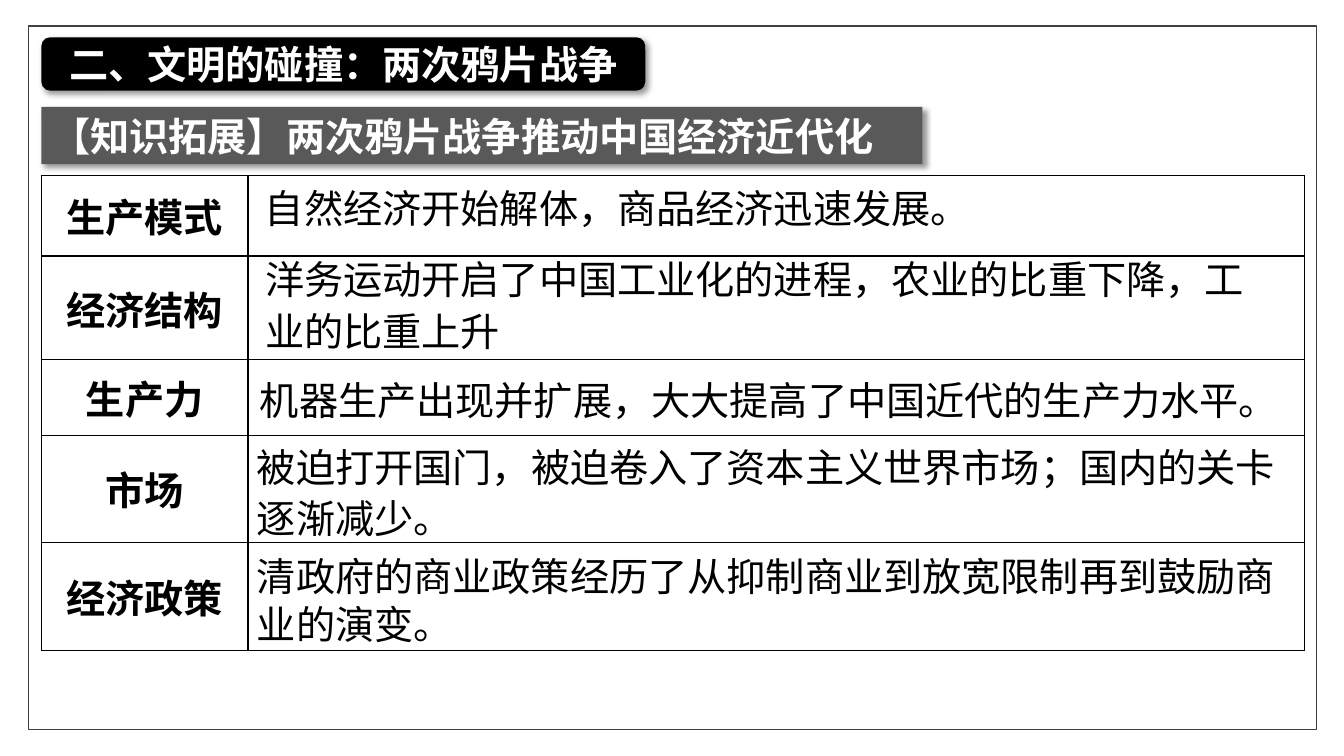
from lxml import etree
from pptx import Presentation
from pptx.dml.color import RGBColor
from pptx.enum.shapes import MSO_SHAPE
from pptx.enum.text import MSO_ANCHOR, PP_ALIGN
from pptx.oxml.ns import qn
from pptx.util import Pt

RECT = MSO_SHAPE.RECTANGLE
ROUNDED = MSO_SHAPE.ROUNDED_RECTANGLE
MIDDLE = MSO_ANCHOR.MIDDLE
LEFT = PP_ALIGN.LEFT
CENTER = PP_ALIGN.CENTER

SCALE = 9144
FONT = "Noto Sans CJK SC"
COLORS = {
    "black": "000000",
    "white": "FFFFFF",
    "frame": "404040",
    "banner": "595959",
}
LABELS = ["生产模式", "经济结构", "生产力", "市场", "经济政策"]
ROW_HEIGHTS = [80, 103, 75, 106, 107]
COLUMN_WIDTHS = [205, 1048]
DETAILS = [
    ("自然经济开始解体，商品经济迅速发展。",
     (253, 164, 1080, 71), 1.3),
    ("洋务运动开启了中国工业化的进程，农业的比重下降，工业的比重上升",
     (253, 243, 1029, 114), Pt(37)),
    ("机器生产出现并扩展，大大提高了中国近代的生产力水平。",
     (248, 368, 1067, 57), 1.0),
    ("被迫打开国门，被迫卷入了资本主义世界市场；国内的关卡逐渐减少。",
     (245, 429, 1061, 114), Pt(37)),
    ("清政府的商业政策经历了从抑制商业到放宽限制再到鼓励商业的演变。",
     (245, 543, 1067, 104), Pt(34)),
]


def px(n):
    return n * SCALE


def rgb(name):
    return RGBColor.from_string(COLORS[name])


def write(tf, text, color="black", bold=False, align=LEFT, spacing=1.0):
    p = tf.paragraphs[0]
    p.alignment = align
    p.line_spacing = spacing
    r = p.add_run()
    r.text = text
    r.font.size = Pt(28)
    r.font.bold = bold
    r.font.name = FONT
    r.font.color.rgb = rgb(color)
    etree.SubElement(r.font._element, qn("a:ea"), typeface=FONT)


def add_box(s, kind, box, fill=None, line=None):
    sp = s.shapes.add_shape(kind, *map(px, box))
    sp.shadow.inherit = False
    if fill:
        sp.fill.solid()
        sp.fill.fore_color.rgb = rgb(fill)
    else:
        sp.fill.background()
    if line:
        sp.line.color.rgb = rgb(line)
        sp.line.width = Pt(1)
    else:
        sp.line.fill.background()
    return sp


def add_shadow(sp):
    effects = sp._element.spPr.find(qn("a:effectLst"))
    shadow = etree.SubElement(
        effects, qn("a:outerShdw"), blurRad=str(Pt(4)), dist=str(Pt(3)),
        dir="2700000", algn="tl", rotWithShape="0")
    color = etree.SubElement(shadow, qn("a:srgbClr"), val=COLORS["black"])
    etree.SubElement(color, qn("a:alpha"), val="40000")


def add_heading(s, kind, box, text, fill, align):
    sp = add_box(s, kind, box, fill)
    add_shadow(sp)
    tf = sp.text_frame
    tf.word_wrap = True
    tf.vertical_anchor = MIDDLE
    write(tf, text, color="white", bold=True, align=align)


def add_borders(cell):
    tcPr = cell._tc.get_or_add_tcPr()
    for i, side in enumerate(("a:lnL", "a:lnR", "a:lnT", "a:lnB")):
        ln = etree.Element(qn(side), w=str(Pt(1)))
        fill = etree.SubElement(ln, qn("a:solidFill"))
        etree.SubElement(fill, qn("a:srgbClr"), val=COLORS["black"])
        tcPr.insert(i, ln)


def add_label_table(s, left, top):
    frame = s.shapes.add_table(
        len(LABELS), len(COLUMN_WIDTHS), px(left), px(top),
        px(sum(COLUMN_WIDTHS)), px(sum(ROW_HEIGHTS)))
    table = frame.table
    table.first_row = False
    table.horz_banding = False
    for column, width in zip(table.columns, COLUMN_WIDTHS):
        column.width = px(width)
    for row, height, label in zip(table.rows, ROW_HEIGHTS, LABELS):
        row.height = px(height)
        for cell in row.cells:
            cell.fill.solid()
            cell.fill.fore_color.rgb = rgb("white")
            add_borders(cell)
        cell = row.cells[0]
        cell.vertical_anchor = MIDDLE
        write(cell.text_frame, label, bold=True, align=CENTER)


def add_detail(s, text, box, spacing):
    tf = s.shapes.add_textbox(*map(px, box)).text_frame
    tf.word_wrap = True
    tf.vertical_anchor = MIDDLE
    write(tf, text, spacing=spacing)


def main():
    prs = Presentation()
    prs.slide_width = px(1333)
    prs.slide_height = px(750)
    s = prs.slides.add_slide(prs.slide_layouts[6])
    add_box(s, RECT, (28, 26, 1278, 698), line="frame")
    add_heading(s, RECT, (41, 106, 874, 57),
                "【知识拓展】两次鸦片战争推动中国经济近代化", "banner", LEFT)
    add_heading(s, ROUNDED, (41, 37, 599, 53),
                "二、文明的碰撞：两次鸦片战争", "black", CENTER)
    add_label_table(s, 41, 174)
    for detail in DETAILS:
        add_detail(s, *detail)
    prs.save("out.pptx")


if __name__ == "__main__":
    main()
